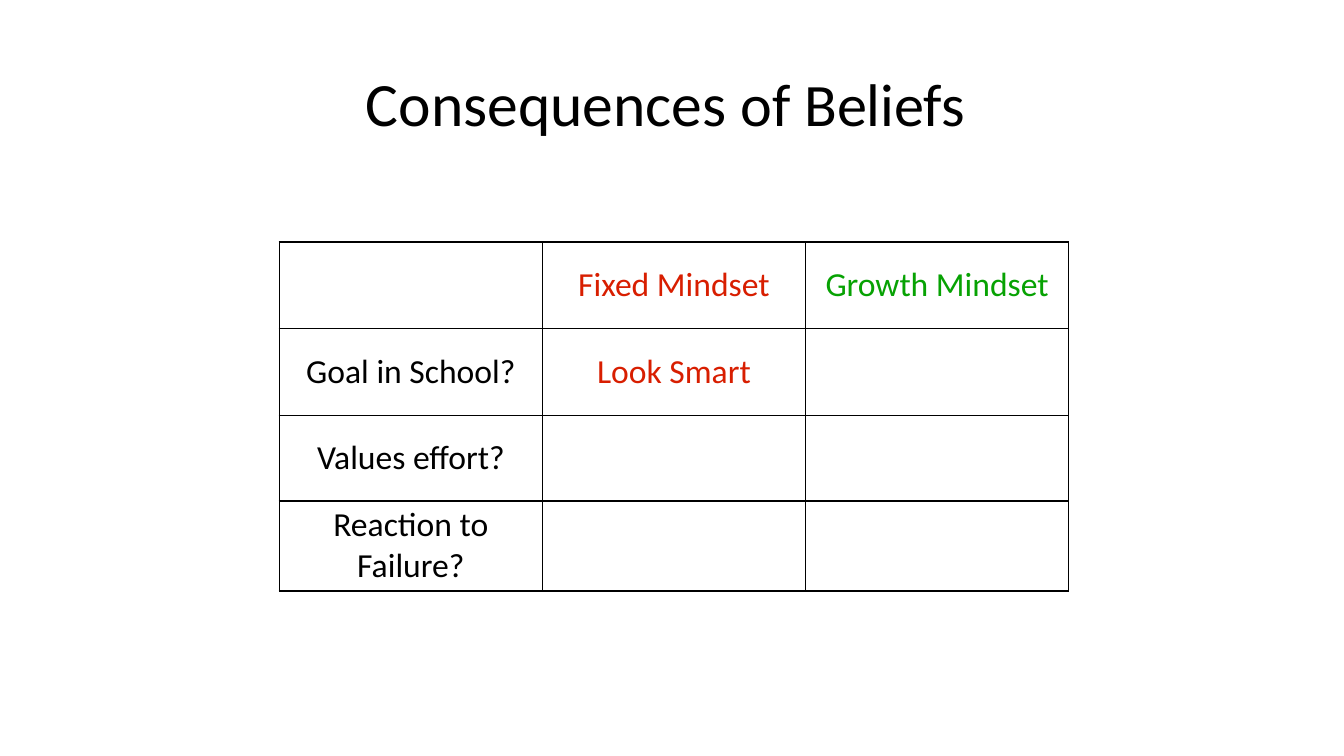
from dataclasses import dataclass

from lxml import etree
from pptx import Presentation
from pptx import util as u
from pptx.dml.color import RGBColor
from pptx.enum import text
from pptx.oxml.ns import qn


@dataclass(frozen=True)
class Theme:
    font: str = "Calibri"
    ink: str = "000000"
    fixed: str = "D81E00"
    growth: str = "07A203"
    title_size: int = 44
    title_tail_size: int = 43
    cell_size: int = 24
    border_width: int = 1


@dataclass(frozen=True)
class CellText:
    row: int
    column: int
    words: str
    color: str


THEME = Theme()
COLUMN_WIDTHS = [2.61] * 3
ROW_HEIGHTS = [0.86, 0.86, 0.85, 0.89]
CELL_TEXTS = [
    CellText(0, 1, "Fixed Mindset", THEME.fixed),
    CellText(0, 2, "Growth Mindset", THEME.growth),
    CellText(1, 0, "Goal in School?", THEME.ink),
    CellText(1, 1, "Look Smart", THEME.fixed),
    CellText(2, 0, "Values effort?", THEME.ink),
    CellText(3, 0, "Reaction to Failure?", THEME.ink),
]


def format_paragraph(paragraph, size: int, color: str) -> None:
    paragraph.alignment = text.PP_ALIGN.CENTER
    paragraph.font.name = THEME.font
    paragraph.font.size = u.Pt(size)
    paragraph.font.color.rgb = RGBColor.from_string(color)


def add_title(slide) -> None:
    title = slide.shapes.title
    title.left, title.top = u.Inches(2.34), u.Inches(0.07)
    title.width, title.height = u.Inches(8.52), u.Inches(1.88)
    frame = title.text_frame
    frame.word_wrap = True
    frame.auto_size = text.MSO_AUTO_SIZE.NONE
    frame.vertical_anchor = text.MSO_ANCHOR.MIDDLE
    frame.margin_left = frame.margin_right = frame.margin_top = frame.margin_bottom = 0
    paragraph = frame.paragraphs[0]
    format_paragraph(paragraph, THEME.title_size, THEME.ink)
    paragraph.add_run().text = "Consequences"
    tail = paragraph.add_run()
    tail.text = " of Beliefs"
    tail.font.size = u.Pt(THEME.title_tail_size)


def format_cell(cell) -> None:
    cell.vertical_anchor = text.MSO_ANCHOR.MIDDLE
    cell.margin_left = cell.margin_right = u.Inches(0.04)
    cell.margin_top = cell.margin_bottom = u.Inches(0.04)
    # Borders come before the fill in the cell properties
    properties = cell._tc.get_or_add_tcPr()
    for side in ("a:lnL", "a:lnR", "a:lnT", "a:lnB"):
        line = etree.SubElement(properties, qn(side), w=str(u.Pt(THEME.border_width)))
        fill = etree.SubElement(line, qn("a:solidFill"))
        etree.SubElement(fill, qn("a:srgbClr"), val=THEME.ink)
    cell.fill.background()


def add_mindset_table(slide) -> None:
    table = slide.shapes.add_table(
        len(ROW_HEIGHTS), len(COLUMN_WIDTHS), u.Inches(2.77), u.Inches(2.4),
        u.Inches(sum(COLUMN_WIDTHS)), u.Inches(sum(ROW_HEIGHTS))).table
    table.first_row = table.horz_banding = False
    for column, width in zip(table.columns, COLUMN_WIDTHS):
        column.width = u.Inches(width)
    for row, height in zip(table.rows, ROW_HEIGHTS):
        row.height = u.Inches(height)
    for cell in table.iter_cells():
        format_cell(cell)
    for entry in CELL_TEXTS:
        cell = table.cell(entry.row, entry.column)
        cell.text = entry.words
        format_paragraph(cell.text_frame.paragraphs[0], THEME.cell_size, entry.color)


def main() -> None:
    presentation = Presentation()
    presentation.slide_width = u.Inches(13.33)
    presentation.slide_height = u.Inches(7.5)
    # Title Only layout
    slide = presentation.slides.add_slide(presentation.slide_layouts[5])
    add_mindset_table(slide)
    add_title(slide)
    presentation.save("out.pptx")


if __name__ == "__main__":
    main()
